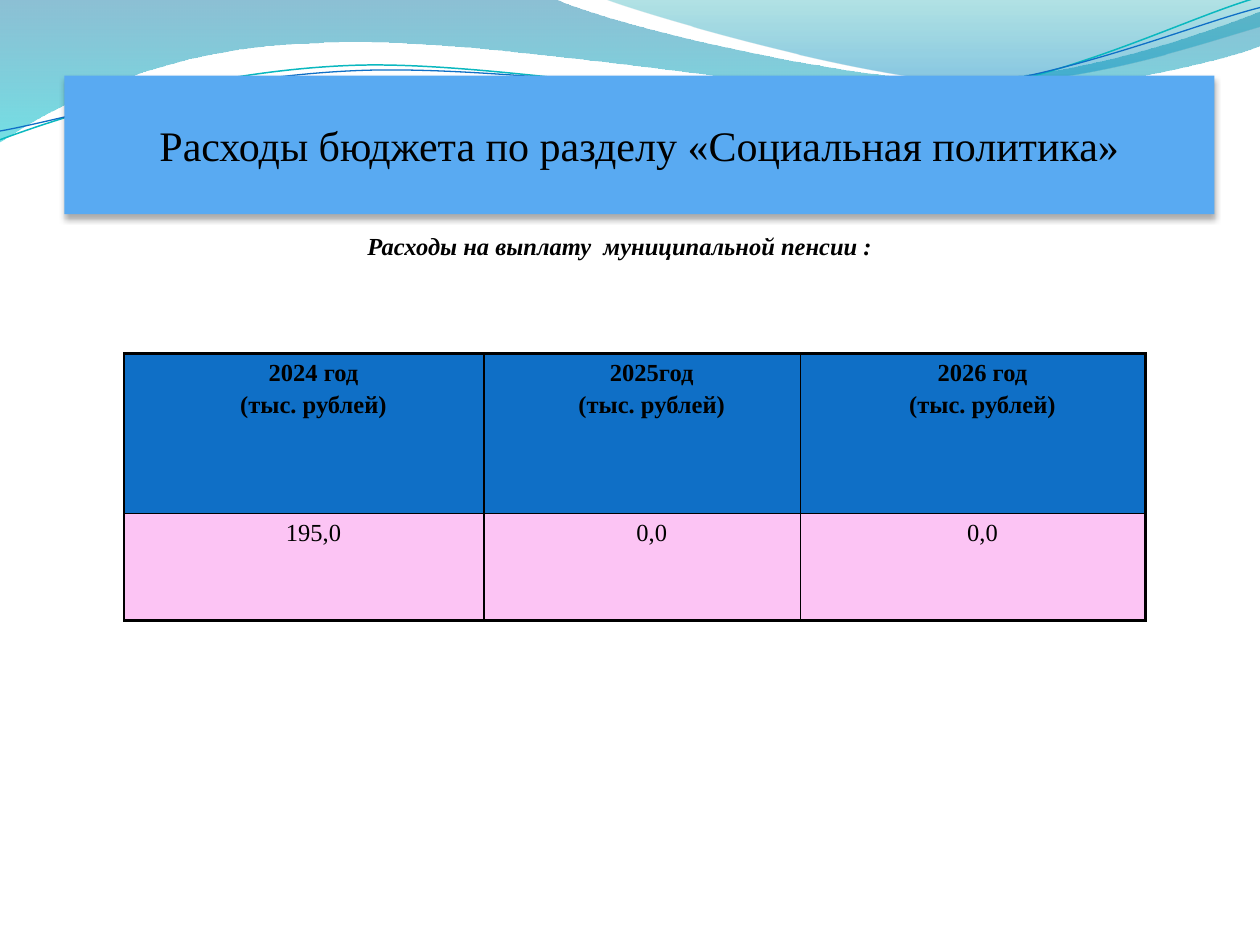
import dataclasses
import math

import lxml.etree
import pptx
import pptx.dml.color
import pptx.enum.text
import pptx.oxml.ns
import pptx.util

Pt = pptx.util.Pt
qn = pptx.oxml.ns.qn
CENTER = pptx.enum.text.PP_ALIGN.CENTER
MIDDLE = pptx.enum.text.MSO_ANCHOR.MIDDLE
BASE_FONT = {"name": "Times New Roman", "size": Pt(14), "bold": False, "italic": False}
BLACK = "000000"


@dataclasses.dataclass(frozen=True)
class GradientStop:
    position: float
    color: str
    opacity: int


@dataclasses.dataclass(frozen=True)
class Wave:
    """Outline in points: pairs are straight steps, sixes are Bezier curves."""
    start: tuple
    steps: tuple
    stops: tuple = ()
    line: str = ""
    weight: float = 0
    tilt: float = 0
    pivot: tuple = (0, 0)


@dataclasses.dataclass(frozen=True)
class Year:
    heading: str
    amount: str
    width: float


WAVES = (
    Wave((0, 0), (
        (316.8, -0.7),
        (342.7, 12.2, 478.1, 45.4, 545.8, 45.4),
        (614.2, 45.4, 689.8, 18.7, 720, 6.5),
        (720.7, 25.9),
        (707.8, 31.7, 626.4, 54.7, 537.1, 54),
        (447.8, 54, 275, 20.2, 185, 24.5),
        (92.9, 25.9, 33.1, 59.8, -0.7, 81.4),
    ), stops=(GradientStop(0, "0074A1", 45), GradientStop(1, "00C6CF", 55))),
    Wave((344.9, -0.7), (
        (366.5, 7.9, 491, 44.6, 553.7, 46.8),
        (616.3, 49.7, 691.9, 23, 720, 15.1),
        (720, 0),
    ), stops=(GradientStop(0, "00A1A9", 30), GradientStop(0.8, "008BBF", 45))),
    Wave((0, 79.9), (
        (34.6, 67, 113.8, 41, 199.4, 37.4),
        (284.4, 33.8, 427, 64.1, 513.4, 57.6),
        (599.8, 51.1, 675.4, 10.8, 718.6, -1.4),
    ), line="0AB8BF", weight=0.85, tilt=-2.7, pivot=(359.3, 41.4)),
    Wave((0, 74.9), (
        (33.8, 69.1, 118.1, 43.9, 203.8, 40.3),
        (290.2, 36.7, 429.8, 60.5, 516.2, 54),
        (601.9, 48.2, 677.5, 15.1, 720, 4.3),
    ), line="0F6FC6", weight=0.75, tilt=-2.7, pivot=(359.6, 42.5)),
)
YEARS = (
    Year("2024 год", "195,0", 205.9),
    Year("2025год", "0,0", 180.7),
    Year("2026 год", "0,0", 197.3),
)


def rgb(value: str) -> pptx.dml.color.RGBColor:
    return pptx.dml.color.RGBColor.from_string(value)


def add_xml(parent, tag: str, **attributes):
    return lxml.etree.SubElement(parent, qn(tag), {k: str(v) for k, v in attributes.items()})


def write(paragraph, words: str, **changes) -> None:
    paragraph.alignment = CENTER
    run = paragraph.add_run()
    run.text = words
    for attribute, value in {**BASE_FONT, **changes}.items():
        setattr(run.font, attribute, value)
    run.font.color.rgb = rgb(BLACK)


def level_point(wave: Wave, x: float, y: float) -> tuple:
    """Position before the wave's tilt, in tenths of a point."""
    angle = math.radians(-wave.tilt)
    dx, dy = x - wave.pivot[0], y - wave.pivot[1]
    return (10 * (wave.pivot[0] + dx * math.cos(angle) - dy * math.sin(angle)),
            10 * (wave.pivot[1] + dx * math.sin(angle) + dy * math.cos(angle)))


def draw_wave(slide, wave: Wave) -> None:
    builder = slide.shapes.build_freeform(*level_point(wave, *wave.start), scale=Pt(1) / 10)
    points = [level_point(wave, *step[i:i + 2])
              for step in wave.steps for i in range(0, len(step), 2)]
    builder.add_line_segments(points, close=bool(wave.stops))
    shape = builder.convert_to_shape()
    shape.shadow.inherit = False
    shape.rotation = wave.tilt % 360

    # Join each three points of a curve into one Bezier step
    segments = iter(list(shape.element.spPr.iter(qn("a:lnTo"))))
    for step in wave.steps:
        group = [next(segments) for _ in range(len(step) // 2)]
        if len(group) == 3:
            curve = lxml.etree.Element(qn("a:cubicBezTo"))
            group[0].addprevious(curve)
            for segment in group:
                curve.append(segment[0])
                segment.getparent().remove(segment)

    if not wave.stops:
        shape.fill.background()
        shape.line.color.rgb = rgb(wave.line)
        shape.line.width = Pt(wave.weight)
        return
    shape.line.fill.background()
    shape.fill.gradient()
    shape.fill.gradient_angle = 270
    for target, stop in zip(shape.fill.gradient_stops, wave.stops):
        target.position = stop.position
        target.color.rgb = rgb(stop.color)
    for color, stop in zip(shape.element.spPr.iter(qn("a:srgbClr")), wave.stops):
        add_xml(color, "a:alpha", val=stop.opacity * 1000)


def draw_heading(slide, words: str) -> None:
    title = slide.shapes.title
    box = {"left": 36.8, "top": 43.2, "width": 657.2, "height": 79.2}
    for attribute, value in box.items():
        setattr(title, attribute, Pt(value))
    properties = title.element.spPr
    add_xml(add_xml(properties, "a:prstGeom", prst="roundRect"), "a:avLst")
    title.fill.solid()
    title.fill.fore_color.rgb = rgb("59AAF2")
    title.line.fill.background()
    shadow = add_xml(add_xml(properties, "a:effectLst"), "a:outerShdw",
                     blurRad=Pt(3.5), dist=Pt(2.2), dir=90 * 60000, rotWithShape=0)
    add_xml(add_xml(shadow, "a:srgbClr", val=BLACK), "a:alpha", val=32000)
    title.text_frame.vertical_anchor = MIDDLE
    write(title.text_frame.paragraphs[0], words, size=Pt(24))
    # The heading lies in front of the waves
    title.element.getparent().append(title.element)


def draw_cell(cell, lines: tuple, fill: str, bold: bool, borders: dict) -> None:
    properties = cell._tc.get_or_add_tcPr()
    for side, weight in borders.items():
        border = add_xml(properties, f"a:ln{side}", w=Pt(weight))
        add_xml(add_xml(border, "a:solidFill"), "a:srgbClr", val=BLACK)
    cell.fill.solid()
    cell.fill.fore_color.rgb = rgb(fill)
    frame = cell.text_frame
    for index, words in enumerate(lines):
        paragraph = frame.add_paragraph() if index else frame.paragraphs[0]
        write(paragraph, words, bold=bold)
        layout = paragraph._p.get_or_add_pPr()
        layout.set("marL", str(Pt(10.8)))
        layout.set("indent", "0")
        add_xml(add_xml(layout, "a:spcBef"), "a:spcPct", val=20000)


def draw_pensions(slide, years: tuple, thin: float = 1, thick: float = 2.25) -> None:
    heights = (91.4, 61.2)
    table = slide.shapes.add_table(2, len(years), Pt(70.8), Pt(202.1),
                                   Pt(sum(y.width for y in years)), Pt(sum(heights))).table
    for row, height in zip(table.rows, heights):
        row.height = Pt(height)
    for index, year in enumerate(years):
        table.columns[index].width = Pt(year.width)
        right = thick if index == len(years) - 1 else thin
        draw_cell(table.cell(0, index), (year.heading, "(тыс. рублей)"), "0F6FC6", True,
                  {"L": thin, "R": right, "T": thick, "B": thin})
        draw_cell(table.cell(1, index), (year.amount,), "FCC4F4", False,
                  {"L": thin, "R": right, "T": thin, "B": thick})


def main() -> None:
    deck = pptx.Presentation()
    deck.slide_width, deck.slide_height = Pt(720), Pt(540)
    slide = deck.slides.add_slide(deck.slide_layouts[5])

    # Decorative waves along the top
    for wave in WAVES:
        draw_wave(slide, wave)

    # Heading and subheading
    draw_heading(slide, "Расходы бюджета по разделу «Социальная политика»")
    subheading = slide.shapes.add_textbox(Pt(19.8), Pt(128.2), Pt(668.9), Pt(24.5)).text_frame
    subheading.word_wrap = True
    write(subheading.paragraphs[0], "Расходы на выплату  муниципальной пенсии :",
          bold=True, italic=True)

    # Pension spending by year
    draw_pensions(slide, YEARS)
    deck.save("out.pptx")


if __name__ == "__main__":
    main()
